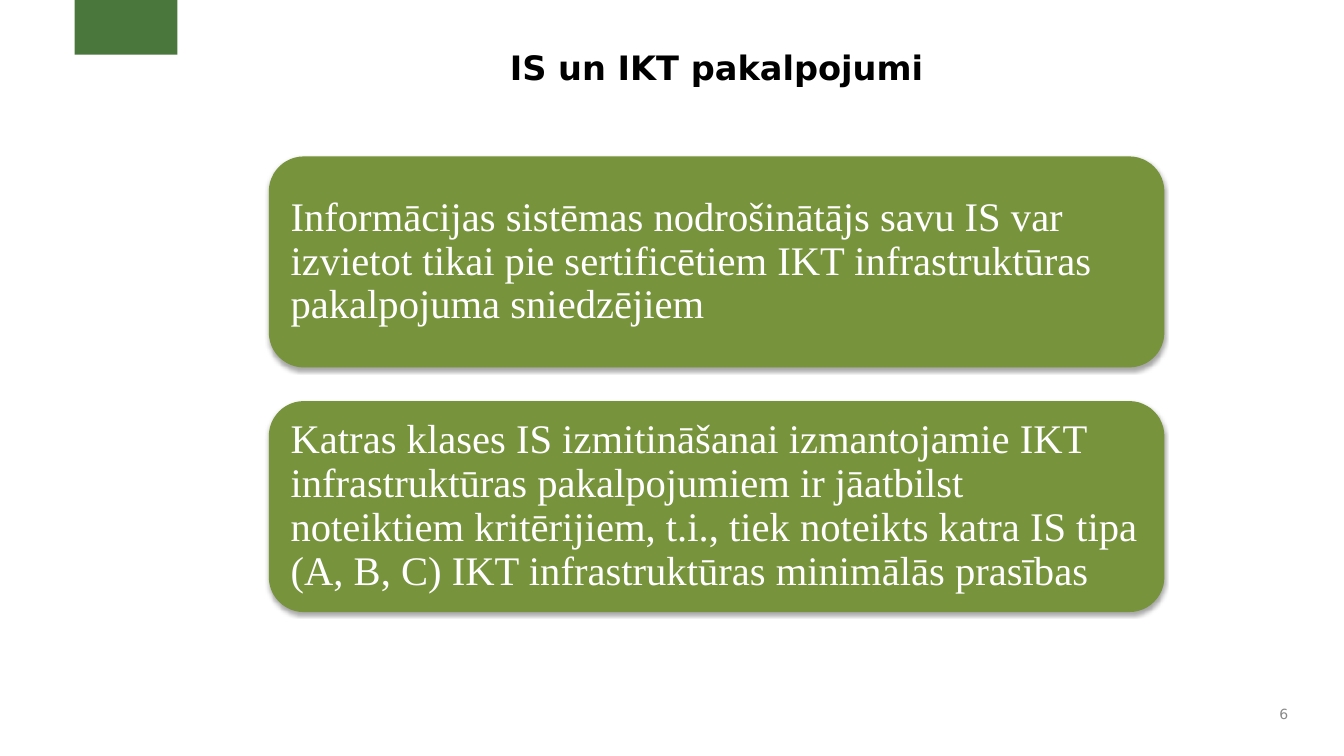
from dataclasses import dataclass

from lxml.etree import SubElement
from pptx import Presentation
from pptx.dml.color import RGBColor
from pptx.enum.shapes import MSO_SHAPE as Shape
from pptx.enum.text import MSO_ANCHOR as Anchor, MSO_AUTO_SIZE as AutoSize, PP_ALIGN as Align
from pptx.oxml.ns import qn
from pptx.util import Emu, Pt

PX = 9525  # EMU per px, 96 px to the inch


@dataclass(frozen=True)
class Theme:
    tab: str = "4A773C"
    card: str = "77933C"
    card_text: str = "FFFFFF"
    title: str = "000000"
    number: str = "898989"
    shadow: str = "000000"
    sans: str = "DejaVu Sans"
    serif: str = "Times New Roman"
    title_size: int = 24
    card_size: int = 29
    number_size: int = 10


THEME = Theme()
RULES = (
    "Informācijas sistēmas nodrošinātājs savu IS var izvietot tikai pie "
    "sertificētiem IKT infrastruktūras pakalpojuma sniedzējiem",
    "Katras klases IS izmitināšanai izmantojamie IKT infrastruktūras "
    "pakalpojumiem ir jāatbilst noteiktiem kritērijiem, t.i., tiek noteikts "
    "katra IS tipa (A, B, C) IKT infrastruktūras minimālās prasības",
)


def px(*lengths):
    return [Emu(length * PX) for length in lengths]


def write(frame, text, font, size, color, align, anchor, insets=(10, 5), bold=False):
    frame.word_wrap = True
    frame.auto_size = AutoSize.NONE
    frame.vertical_anchor = anchor
    side, top = px(*insets)
    frame.margin_left = frame.margin_right = side
    frame.margin_top = frame.margin_bottom = top
    frame.text = text
    paragraph = frame.paragraphs[0]
    paragraph.alignment = align
    for run in paragraph.runs:
        run.font.name = font
        run.font.size = Pt(size)
        run.font.bold = bold
        run.font.color.rgb = RGBColor.from_string(color)
    return paragraph


def add_block(slide, preset, box, color):
    block = slide.shapes.add_shape(preset, *px(*box))
    block.shadow.inherit = False
    block.fill.solid()
    block.fill.fore_color.rgb = RGBColor.from_string(color)
    block.line.fill.background()
    return block


def add_soft_shadow(block):
    effects = block.element.spPr.find(qn("a:effectLst"))
    shadow = SubElement(effects, qn("a:outerShdw"), blurRad=str(Pt(3.1)),
                        dist=str(Pt(1.8)), dir="5400000", rotWithShape="0")
    color = SubElement(shadow, qn("a:srgbClr"), val=THEME.shadow)
    SubElement(color, qn("a:alpha"), val="35000")


def place_title(slide, box, text):
    title = slide.shapes.title
    title.left, title.top, title.width, title.height = px(*box)
    write(title.text_frame, text, THEME.sans, THEME.title_size, THEME.title,
          Align.CENTER, Anchor.TOP, bold=True)


def add_rule_cards(slide, box, rules, gap):
    left, top, width, height = box
    card_height = (height - gap * (len(rules) - 1)) // len(rules)
    for index, rule in enumerate(rules):
        card_top = top + index * (card_height + gap)
        card = add_block(slide, Shape.ROUNDED_RECTANGLE,
                         (left, card_top, width, card_height), THEME.card)
        add_soft_shadow(card)
        # The rounded corners already keep the text 10 px from the edge
        paragraph = write(card.text_frame, rule, THEME.serif, THEME.card_size,
                          THEME.card_text, Align.LEFT, Anchor.MIDDLE, insets=(11, 5))
        paragraph.line_spacing = 0.9


def add_slide_number(slide, box, number):
    number_box = slide.shapes.add_textbox(*px(*box))
    write(number_box.text_frame, number, THEME.sans, THEME.number_size,
          THEME.number, Align.RIGHT, Anchor.MIDDLE)


def main():
    deck = Presentation()
    deck.slide_width, deck.slide_height = px(1280, 720)
    slide = deck.slides.add_slide(deck.slide_layouts[5])  # title only

    # Corner tab and title
    add_block(slide, Shape.RECTANGLE, (71, 0, 98, 52), THEME.tab)
    place_title(slide, (256, 40, 853, 108), "IS un IKT pakalpojumi")

    # Rule cards and slide number
    add_rule_cards(slide, (256, 149, 853, 434), RULES, gap=32)
    add_slide_number(slide, (1195, 664, 42, 32), "6")

    deck.save("out.pptx")


if __name__ == "__main__":
    main()
